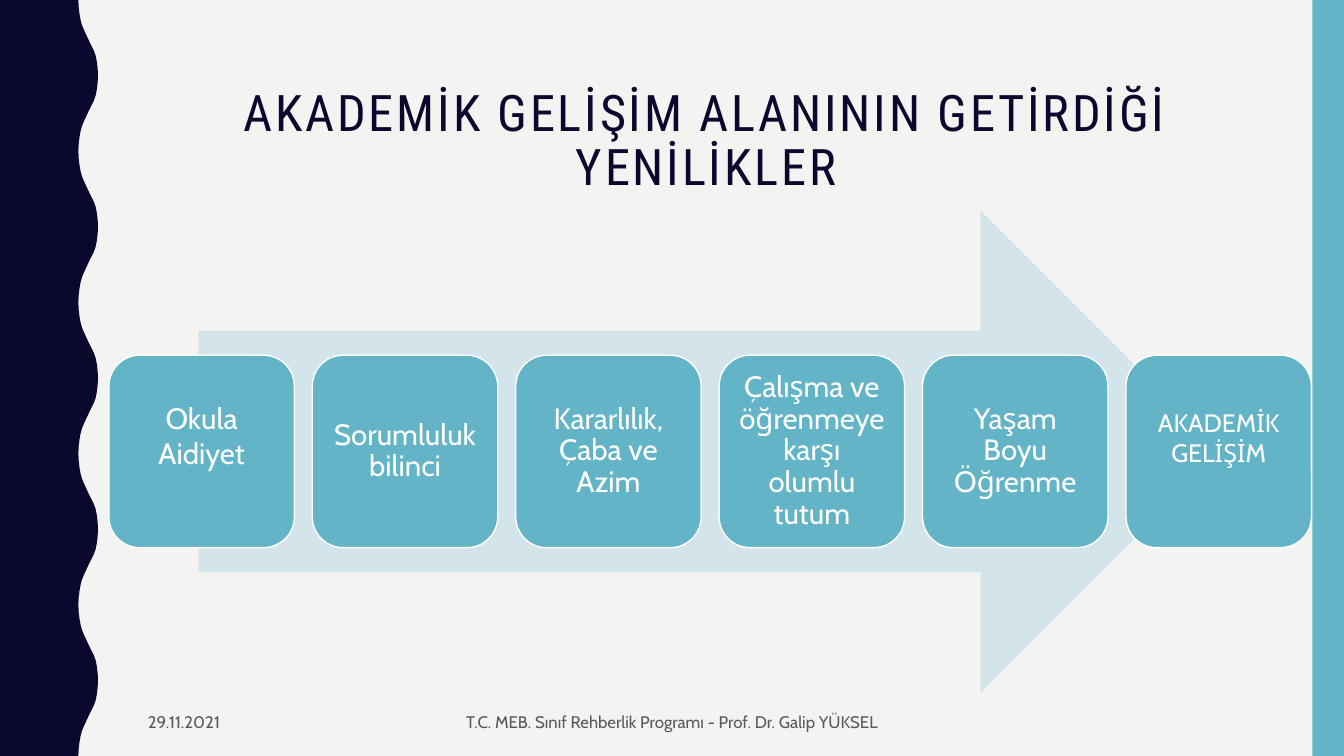
"""Build the slide on what the academic development area brings."""
from pptx import Presentation
from pptx.dml.color import RGBColor
from pptx.enum import shapes, text
from pptx.util import Pt

COLOURS = {"paper": "F3F3F2", "navy": "0B082E", "teal": "62B4C6",
           "pale": "D3E5EA", "white": "FFFFFF", "grey": "595959"}


def paint(shape, colour):
    shape.shadow.inherit = False
    shape.fill.solid()
    shape.fill.fore_color.rgb = RGBColor.from_string(COLOURS[colour])
    shape.line.fill.background()


def write(frame, words, font, size, colour, align):
    frame.word_wrap = True
    frame.auto_size = text.MSO_AUTO_SIZE.NONE
    frame.vertical_anchor = text.MSO_ANCHOR.MIDDLE
    paragraph = frame.paragraphs[0]
    paragraph.text = words
    paragraph.alignment = align
    paragraph.font.name = font
    paragraph.font.size = Pt(size)
    paragraph.font.color.rgb = RGBColor.from_string(COLOURS[colour])
    return paragraph


LEFT, CENTER = text.PP_ALIGN.LEFT, text.PP_ALIGN.CENTER
deck = Presentation()
deck.slide_width, deck.slide_height = Pt(960), Pt(540)
slide = deck.slides.add_slide(deck.slide_layouts[5])
slide.background.fill.solid()
slide.background.fill.fore_color.rgb = RGBColor.from_string(COLOURS["paper"])

rise = [(56, 0), (56.2, 5), (56.8, 10), (57.6, 14.4), (58.6, 18), (59.8, 21),
        (61.2, 24), (62.6, 27), (64, 30), (65.5, 33), (67, 36), (68.3, 39.6),
        (69.2, 44), (69.8, 49), (70, 54)]
wave = rise + [(x, 108 - y) for x, y in reversed(rise[1:-1])]
edge = [(x, y + 108 * crest) for crest in range(5) for x, y in wave]
outline = slide.shapes.build_freeform(0, 0)
outline.add_line_segments([(Pt(x), Pt(y)) for x, y in edge + [(56, 540), (0, 540)]])
paint(outline.convert_to_shape(), "navy")

side_band = slide.shapes.add_shape(
    shapes.MSO_SHAPE.RECTANGLE, Pt(937.5), 0, Pt(22.5), Pt(540))
paint(side_band, "teal")

title = slide.shapes.title
title.left, title.top, title.width, title.height = Pt(103.7), Pt(59), Pt(801.4), Pt(104.4)
heading = write(title.text_frame, "AKADEMİK GELİŞİM ALANININ GETİRDİĞİ YENİLİKLER",
                "Roboto Condensed", 36, "navy", CENTER)
title.text_frame.vertical_anchor = text.MSO_ANCHOR.TOP
heading.line_spacing = 0.9
heading.runs[0]._r.get_or_add_rPr().set("spc", "200")

for words, left, width, align in [
    ("29.11.2021", 98.6, 183.6, LEFT),
    ("T.C. MEB. Sınıf Rehberlik Programı - Prof. Dr. Galip YÜKSEL", 318.2, 324, CENTER),
]:
    footer = slide.shapes.add_textbox(Pt(left), Pt(501.8), Pt(width), Pt(27.4))
    write(footer.text_frame, words, "Cabin", 12, "grey", align)

arrow = slide.shapes.add_shape(
    shapes.MSO_SHAPE.RIGHT_ARROW, Pt(141.8), Pt(150.5), Pt(730.8), Pt(344.2))
paint(arrow, "pale")

steps = [
    ("Okula Aidiyet", 21, 1, 23),
    ("Sorumluluk bilinci", 21, 0.9, 0),
    ("Kararlılık, Çaba ve Azim", 21, 0.9, 0),
    ("Çalışma ve öğrenmeye karşı olumlu tutum", 21, 0.9, 0),
    ("Yaşam Boyu Öğrenme", 21, 0.9, 0),
    ("AKADEMİK GELİŞİM", 18, 1, 20),
]
for index, (words, size, spacing, lift) in enumerate(steps):
    step = slide.shapes.add_shape(
        shapes.MSO_SHAPE.ROUNDED_RECTANGLE,
        Pt(77.8 + 145.3 * index), Pt(253.7), Pt(132.5), Pt(137.5))
    paint(step, "teal")
    step.line.color.rgb = RGBColor.from_string(COLOURS["white"])
    step.line.width = Pt(1)
    frame = step.text_frame
    inset = size * 0.3
    frame.margin_left = frame.margin_right = frame.margin_top = Pt(inset)
    frame.margin_bottom = Pt(inset + lift)
    write(frame, words, "Cabin", size, "white", CENTER).line_spacing = spacing

deck.save("out.pptx")
